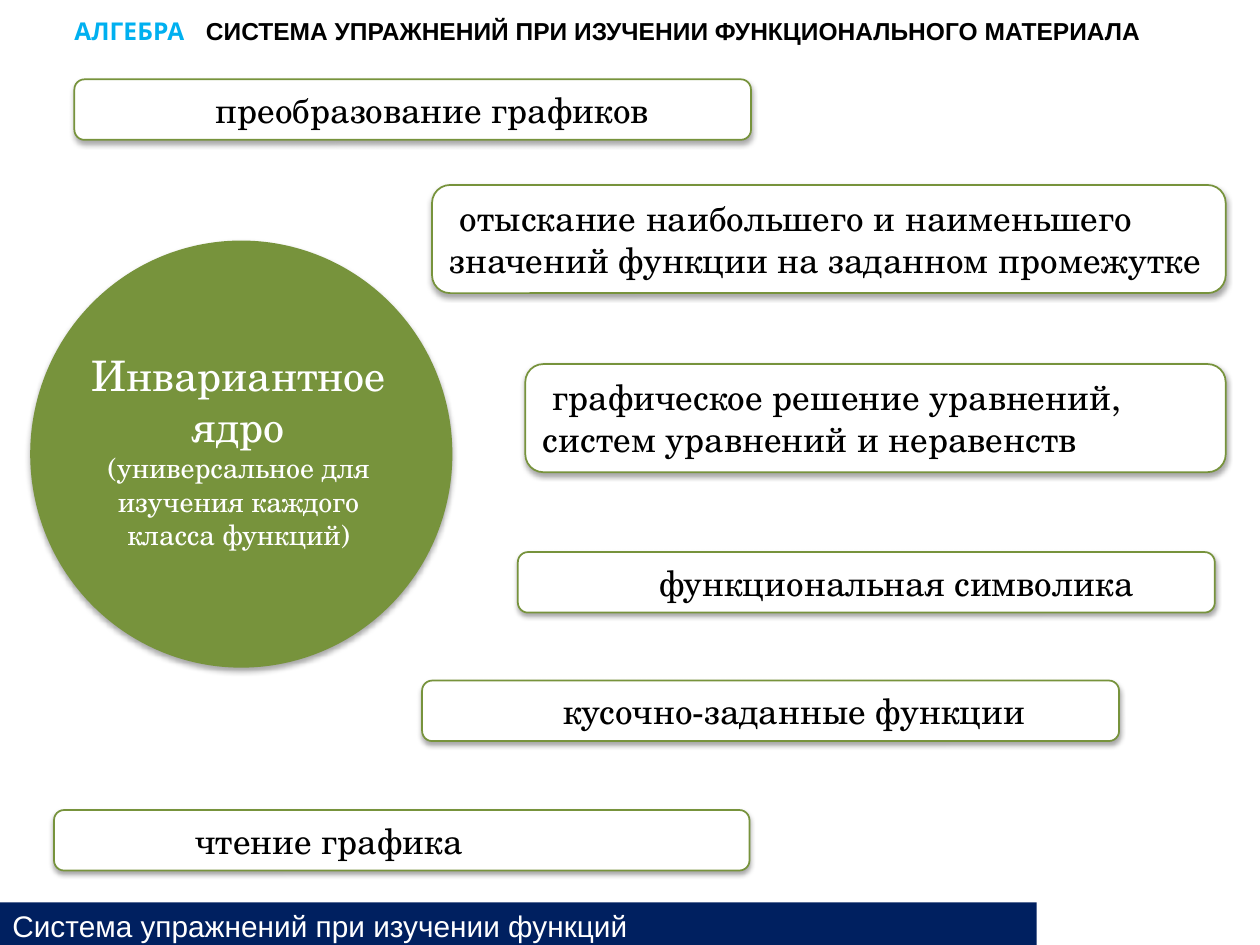
import lxml.etree
import pptx
import pptx.dml.color
import pptx.enum.shapes
import pptx.enum.text
import pptx.oxml.ns
import pptx.util

Cm = pptx.util.Cm
Pt = pptx.util.Pt
Shape = pptx.enum.shapes.MSO_SHAPE
Align = pptx.enum.text.PP_ALIGN
Anchor = pptx.enum.text.MSO_ANCHOR

THEME = {
    "green": "77933C", "white": "FFFFFF", "black": "000000",
    "navy": "002060", "sky": "00B0F0",
    "serif": "TeX Gyre Schola", "sans": "Arial", "accent": "Cabin",
    "heading": 14, "label": 20, "core": 24, "note": 16, "footer": 17,
}

SUBJECT = "АЛГЕБРА\t "
TOPIC = "СИСТЕМА УПРАЖНЕНИЙ ПРИ ИЗУЧЕНИИ ФУНКЦИОНАЛЬНОГО МАТЕРИАЛА"
CORE = "Инвариантное ядро"
CORE_NOTE = "(универсальное для изучения каждого класса функций)"
FOOTER = "Система упражнений при изучении функций"

WIDE_INDENT, SMALL_INDENT = 2.54, 0.2
ONE_LINE, TWO_LINES = 1.22, 2.18
LABELS = [
    (1.09, 16.33, 14.02, ONE_LINE, WIDE_INDENT, ["чтение графика"]),
    (10.59, 7.34, 14.12, TWO_LINES, SMALL_INDENT,
     ["графическое решение уравнений, систем уравнений и неравенств"]),
    (8.71, 3.73, 16, TWO_LINES, SMALL_INDENT,
     ["отыскание наибольшего и наименьшего",
      "значений функции на заданном промежутке"]),
    (1.5, 1.6, 13.64, ONE_LINE, WIDE_INDENT, ["преобразование графиков"]),
    (10.44, 11.13, 14.05, ONE_LINE, WIDE_INDENT, ["функциональная символика"]),
    (8.51, 13.72, 14.05, ONE_LINE, WIDE_INDENT, ["кусочно-заданные функции"]),
]


def rgb(name):
    return pptx.dml.color.RGBColor.from_string(THEME[name])


def write(paragraph, text, *, size, color, font="serif", bold=False,
          align=Align.LEFT, indent=0):
    paragraph.alignment = align
    properties = paragraph._p.get_or_add_pPr()
    properties.set("marL", "0")
    properties.set("indent", str(Cm(indent)))
    run = paragraph.add_run()
    run.text = text
    run.font.size = Pt(THEME[size])
    run.font.name = THEME[font]
    run.font.bold = bold
    run.font.color.rgb = rgb(color)


def add_shadow(shape):
    tag = pptx.oxml.ns.qn
    effects = shape._element.spPr.find(tag("a:effectLst"))
    shadow = lxml.etree.SubElement(
        effects, tag("a:outerShdw"), blurRad=str(Pt(3.1)), dist=str(Pt(1.8)),
        dir="5400000", rotWithShape="0")
    tint = lxml.etree.SubElement(shadow, tag("a:srgbClr"), val=THEME["black"])
    lxml.etree.SubElement(tint, tag("a:alpha"), val="35000")


def add_block(slide, kind, box, fill, outline=None, shadow=True):
    block = slide.shapes.add_shape(kind, *map(Cm, box))
    block.shadow.inherit = False
    block.fill.solid()
    block.fill.fore_color.rgb = rgb(fill)
    if outline:
        block.line.color.rgb = rgb(outline)
        block.line.width = Pt(1)
    else:
        block.line.fill.background()
    if shadow:
        add_shadow(block)
    return block


def add_heading(slide):
    heading = slide.shapes.title
    heading.left, heading.top, heading.width, heading.height = map(
        Cm, (1.5, 0.33, 21.79, 1.8))
    frame = heading.text_frame
    frame.margin_left = frame.margin_top = 0
    frame.margin_right = frame.margin_bottom = 0
    frame.word_wrap = True
    frame.auto_size = pptx.enum.text.MSO_AUTO_SIZE.NONE
    frame.vertical_anchor = Anchor.TOP
    line = frame.paragraphs[0]
    write(line, SUBJECT, size="heading", color="sky", font="accent", bold=True)
    write(line, TOPIC, size="heading", color="black", font="sans", bold=True)


def add_label(slide, left, top, width, height, indent, lines):
    label = add_block(slide, Shape.ROUNDED_RECTANGLE,
                      (left, top, width, height), "white", outline="green")
    frame = label.text_frame
    frame.vertical_anchor = Anchor.TOP
    for number, line in enumerate(lines):
        paragraph = frame.add_paragraph() if number else frame.paragraphs[0]
        write(paragraph, line, size="label", color="black",
              indent=0 if number else indent)


def add_core(slide):
    add_block(slide, Shape.OVAL, (0.61, 4.85, 8.51, 8.61), "green")
    caption = slide.shapes.add_textbox(*map(Cm, (1.5, 6.93, 6.63, 5.21)))
    frame = caption.text_frame
    frame.word_wrap = True
    write(frame.paragraphs[0], CORE, size="core", color="white",
          align=Align.CENTER)
    write(frame.add_paragraph(), CORE_NOTE, size="note", color="white",
          align=Align.CENTER)


def add_footer(slide):
    footer = add_block(slide, Shape.RECTANGLE, (0, 18.19, 20.9, 0.94),
                       "navy", shadow=False)
    footer.text_frame.vertical_anchor = Anchor.MIDDLE
    write(footer.text_frame.paragraphs[0], FOOTER, size="footer",
          color="white", font="sans")


def main():
    deck = pptx.Presentation()
    deck.slide_width, deck.slide_height = Cm(25.4), Cm(19.05)
    slide = deck.slides.add_slide(deck.slide_layouts[5])
    add_heading(slide)
    for label in LABELS:
        add_label(slide, *label)
    add_core(slide)
    add_footer(slide)
    deck.save("out.pptx")


if __name__ == "__main__":
    main()
